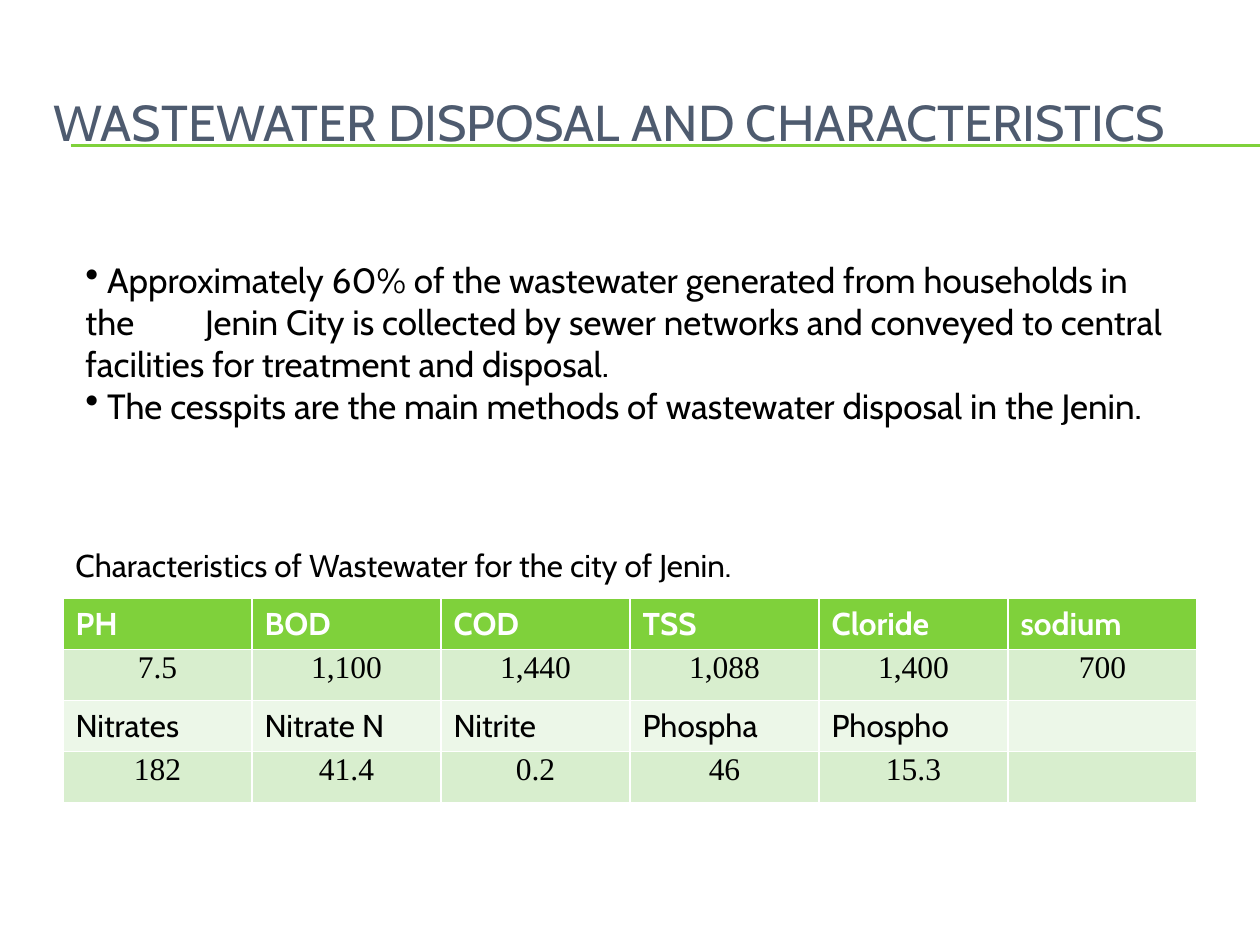
"""Build the slide on wastewater disposal and characteristics in Jenin."""
from lxml import etree
from pptx import Presentation
from pptx.dml.color import RGBColor
from pptx.enum import shapes, text
from pptx.oxml import ns
from pptx.util import Inches, Pt

TITLE = "WASTEWATER DISPOSAL AND CHARACTERISTICS"
POINTS = [
    " Approximately 60% of the wastewater generated from households in the\tJenin City "
    "is collected by sewer networks and conveyed to central facilities for treatment "
    "and disposal.",
    " The cesspits are the main methods of wastewater disposal in the Jenin.",
]
CAPTION = "Characteristics of Wastewater for the city of Jenin."
MEASURES = [
    ("PH", "BOD", "COD", "TSS", "Cloride", "sodium"),
    ("7.5", "1,100", "1,440", "1,088", "1,400", "700"),
    ("Nitrates", "Nitrate N", "Nitrite", "Phospha", "Phospho", ""),
    ("182", "41.4", "0.2", "46", "15.3", ""),
]
RULE_LEFT, RULE_TOPS = 0.56, (1.15, 1.16)
SLIDE_WIDTH, SLIDE_HEIGHT = 10, 7.5
TABLE_BOX = (0.5, 4.75, 9, 1.62)
THEME = {
    "font": "Cabin", "number_font": "Times New Roman",
    "title": "4E5B6F", "body": "000000", "header": "FFFFFF",
    "accent": "7FD13B", "band": "D8EECE", "light": "ECF7E8",
    "title_size": 28.8, "body_size": 20, "table_size": 18,
}


def color(name):
    return RGBColor.from_string(THEME[name])


def style(paragraph, size, ink="body", font="font", bold=False):
    paragraph.font.name = THEME[font]
    paragraph.font.size = Pt(THEME[size])
    paragraph.font.bold = bold
    paragraph.font.color.rgb = color(ink)


def add_text(slide, box, paragraphs, size, anchor, ink="body"):
    frame = slide.shapes.add_textbox(*map(Inches, box)).text_frame
    frame.word_wrap = True
    frame.vertical_anchor = anchor
    frame.text = "\n".join(paragraphs)
    for paragraph in frame.paragraphs:
        style(paragraph, size, ink)
    return frame


def add_bullet(paragraph, tab):
    properties = paragraph.font._element.getparent()
    properties.set("marL", "0")
    properties.set("indent", "0")
    size = etree.Element(ns.qn("a:buSzPct"), val="110000")
    bullet = etree.Element(ns.qn("a:buChar"), char="•")
    tabs = etree.Element(ns.qn("a:tabLst"))
    etree.SubElement(tabs, ns.qn("a:tab"), pos=str(Inches(tab)), algn="l")
    for index, element in enumerate((size, bullet, tabs)):
        properties.insert(index, element)


def add_rule(slide, top):
    rule = slide.shapes.add_connector(
        shapes.MSO_CONNECTOR.STRAIGHT,
        Inches(RULE_LEFT), Inches(top), Inches(SLIDE_WIDTH), Inches(top))
    rule.line.color.rgb = color("accent")
    rule.line.width = Pt(0.75)
    etree.SubElement(rule._element.spPr, ns.qn("a:effectLst"))


def add_measures(slide):
    table = slide.shapes.add_table(
        len(MEASURES), len(MEASURES[0]), *map(Inches, TABLE_BOX)).table
    for row, values in enumerate(MEASURES):
        header, numeric = row == 0, row % 2 == 1
        fill = "accent" if header else "band" if numeric else "light"
        for column, value in enumerate(values):
            cell = table.cell(row, column)
            cell.fill.solid()
            cell.fill.fore_color.rgb = color(fill)
            cell.text = value
            paragraph = cell.text_frame.paragraphs[0]
            style(paragraph, "table_size", "header" if header else "body",
                  "number_font" if numeric else "font", header)
            if numeric and value:
                paragraph.alignment = text.PP_ALIGN.CENTER
                cell.margin_left = cell.margin_right = cell.margin_top = Inches(0.01)
                cell.margin_bottom = 0


def main():
    presentation = Presentation()
    presentation.slide_width = Inches(SLIDE_WIDTH)
    presentation.slide_height = Inches(SLIDE_HEIGHT)
    slide = presentation.slides.add_slide(presentation.slide_layouts[6])
    for top in RULE_TOPS:
        add_rule(slide, top)
    add_text(slide, (0.33, 0.5, 9.5, 0.92), [TITLE], "title_size",
             text.MSO_ANCHOR.MIDDLE, "title")
    add_measures(slide)
    points = add_text(slide, (0.58, 2, 8.92, 1.78), POINTS, "body_size",
                      text.MSO_ANCHOR.TOP)
    for paragraph in points.paragraphs:
        add_bullet(paragraph, 0.95)
    add_text(slide, (0.5, 3.67, 8.42, 1.01), [CAPTION], "table_size",
             text.MSO_ANCHOR.BOTTOM)
    presentation.save("out.pptx")


if __name__ == "__main__":
    main()
